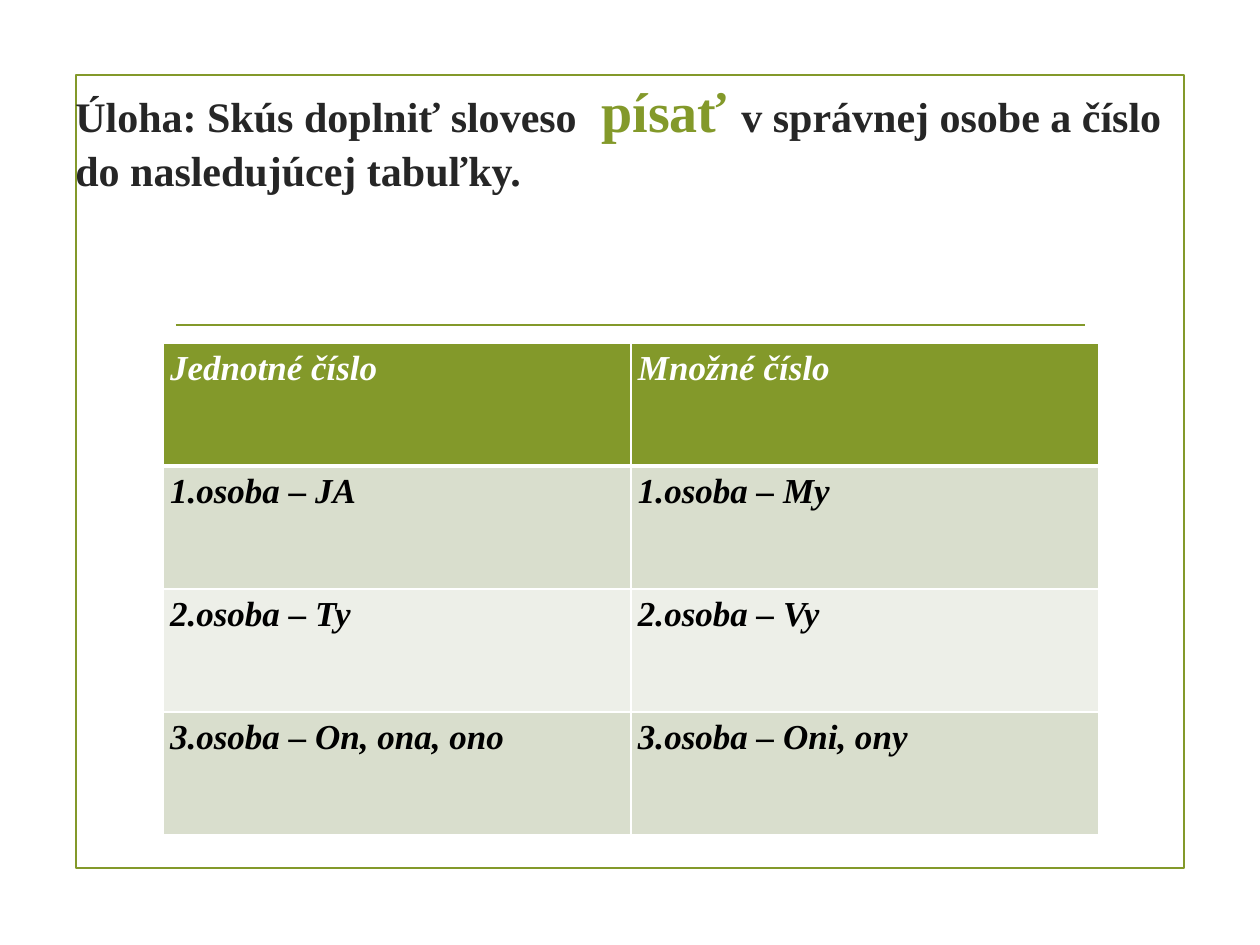
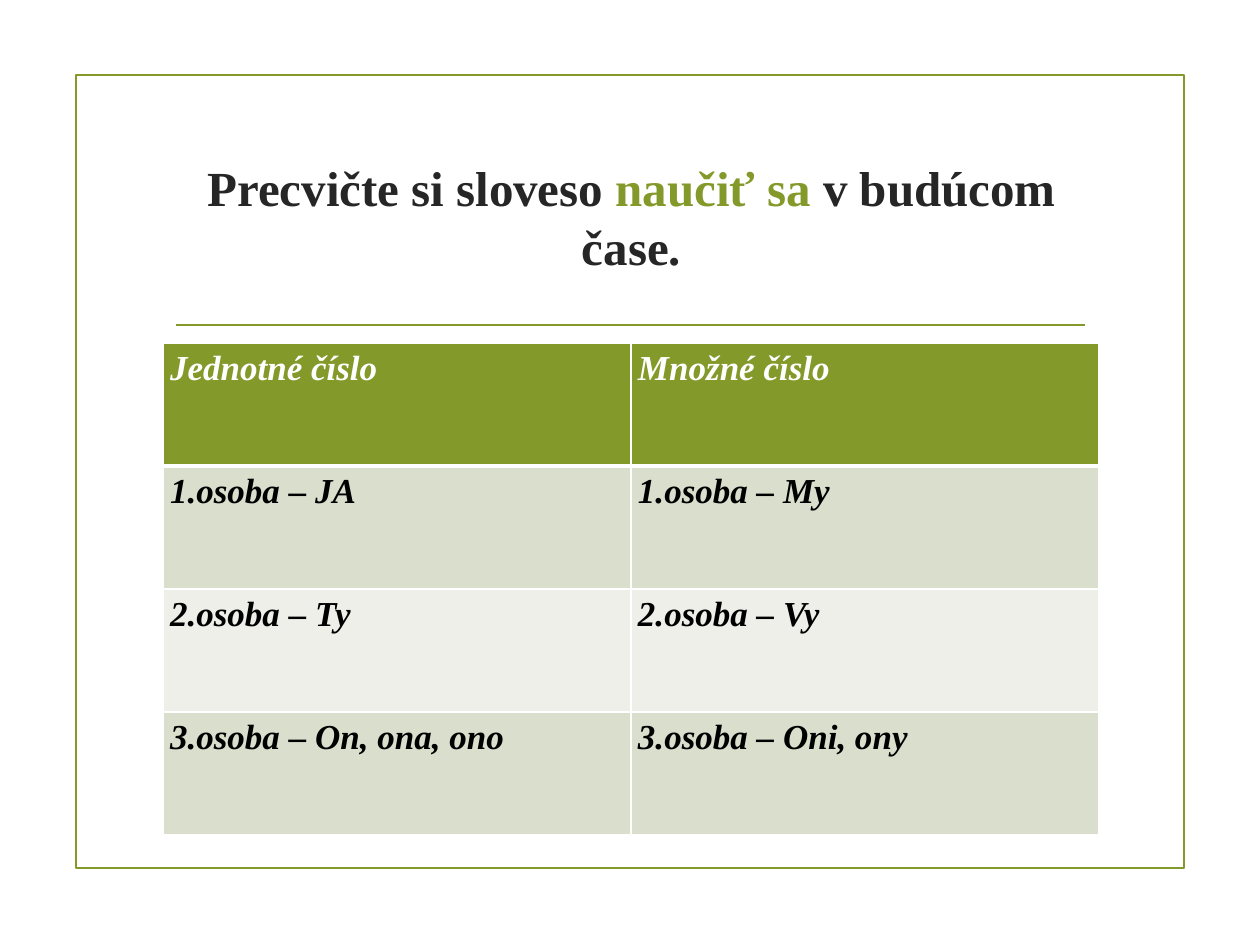
from dataclasses import dataclass
from typing import NamedTuple

from lxml.etree import SubElement
from pptx import Presentation
from pptx.dml.color import RGBColor
from pptx.enum.shapes import MSO_CONNECTOR, MSO_SHAPE
from pptx.enum.text import MSO_ANCHOR, PP_ALIGN
from pptx.oxml.ns import qn
from pptx.slide import Slide
from pptx.table import _Cell as Cell
from pptx.util import Emu, Pt


def px(count: int) -> Emu:
    return Emu(round(count * 914400 / 126))


@dataclass(frozen=True)
class Theme:
    font: str = "Times New Roman"
    green: str = "83992A"
    ink: str = "262626"
    black: str = "000000"
    white: str = "FFFFFF"
    bands: tuple[str, str] = ("D9DECD", "EDEFE8")
    small: int = 24
    medium: int = 28
    large: int = 32
    body: int = 20
    rule: float = 1.25
    thin: int = 1
    thick: int = 3


THEME = Theme()


class Box(NamedTuple):
    left: int
    top: int
    width: int
    height: int

    def emu(self) -> list[Emu]:
        return [px(side) for side in self]


class Phrase(NamedTuple):
    text: str
    size: int
    color: str = THEME.ink
    track: int = 0  # extra letter spacing, in points


@dataclass(frozen=True)
class Title:
    box: Box
    phrases: list[Phrase]
    align: PP_ALIGN
    bottom: int = 6


FRAME = Box(76, 75, 1108, 793)
RULE = Box(176, 325, 909, 0)
GRID = Box(163, 343, 936, 492)
PAD = 7
ROWS = [
    ("Jednotné číslo", "Množné číslo"),
    ("1.osoba – JA", "1.osoba – My"),
    ("2.osoba – Ty", "2.osoba – Vy"),
    ("3.osoba – On, ona, ono", "3.osoba – Oni, ony"),
]
TITLES = [
    Title(
        Box(63, 59, 1134, 195),
        [
            Phrase("Úloha: Skús doplniť sloveso", THEME.small),
            Phrase(" ", THEME.large, track=6),
            Phrase("písať ", THEME.large, THEME.green),
            Phrase("v správnej osobe a číslo do nasledujúcej tabuľky.", THEME.small),
        ],
        PP_ALIGN.LEFT,
        bottom=48,
    ),
    Title(
        Box(163, 126, 937, 180),
        [
            Phrase("Precvičte si sloveso ", THEME.medium),
            Phrase("naučiť sa ", THEME.medium, THEME.green),
            Phrase("v budúcom čase.", THEME.medium),
        ],
        PP_ALIGN.CENTER,
    ),
]


def rgb(code: str) -> RGBColor:
    return RGBColor.from_string(code)


def add_base(slide: Slide) -> None:
    """Draw the frame and the rule that every slide shares."""
    frame = slide.shapes.add_shape(MSO_SHAPE.RECTANGLE, *FRAME.emu())
    frame.shadow.inherit = False
    frame.fill.background()
    left, top, width, _ = RULE
    rule = slide.shapes.add_connector(
        MSO_CONNECTOR.STRAIGHT, px(left), px(top), px(left + width), px(top)
    )
    for shape in (frame, rule):
        shape.line.color.rgb = rgb(THEME.green)
        shape.line.width = Pt(THEME.rule)
    SubElement(rule._element.spPr, qn("a:effectLst"))


def add_title(slide: Slide, title: Title) -> None:
    frame = slide.shapes.add_textbox(*title.box.emu()).text_frame
    frame.word_wrap = True
    frame.vertical_anchor = MSO_ANCHOR.MIDDLE
    frame.margin_bottom = px(title.bottom)
    para = frame.paragraphs[0]
    para.alignment = title.align
    para.font.name = THEME.font
    para.font.bold = True
    for phrase in title.phrases:
        run = para.add_run()
        run.text = phrase.text
        run.font.size = Pt(phrase.size)
        run.font.color.rgb = rgb(phrase.color)
        if phrase.track:
            run._r.get_or_add_rPr().set("spc", str(phrase.track * 100))


def set_edges(cell: Cell, above: int, below: int) -> None:
    """Give the cell white borders; call before setting its fill."""
    props = cell._tc.get_or_add_tcPr()
    widths = {"L": THEME.thin, "R": THEME.thin, "T": above, "B": below}
    for side, width in widths.items():
        line = SubElement(props, qn(f"a:ln{side}"), w=str(Pt(width)))
        fill = SubElement(line, qn("a:solidFill"))
        SubElement(fill, qn("a:srgbClr"), val=THEME.white)


def set_cell(cell: Cell, text: str, row: int) -> None:
    head = row == 0
    set_edges(
        cell,
        THEME.thick if row == 1 else THEME.thin,
        THEME.thick if head else THEME.thin,
    )
    cell.fill.solid()
    cell.fill.fore_color.rgb = rgb(THEME.green if head else THEME.bands[(row - 1) % 2])
    cell.margin_left = cell.margin_right = px(PAD)
    cell.margin_top = cell.margin_bottom = 0
    para = cell.text_frame.paragraphs[0]
    para.text = text
    para.alignment = PP_ALIGN.JUSTIFY
    para.line_spacing = 1.15
    font = para.font
    font.name, font.size = THEME.font, Pt(THEME.body)
    font.bold = font.italic = True
    font.color.rgb = rgb(THEME.white if head else THEME.black)


def add_grid(slide: Slide) -> None:
    table = slide.shapes.add_table(len(ROWS), len(ROWS[0]), *GRID.emu()).table
    for row, texts in enumerate(ROWS):
        for col, text in enumerate(texts):
            set_cell(table.cell(row, col), text, row)


def main() -> None:
    deck = Presentation()
    deck.slide_width, deck.slide_height = px(1260), px(945)
    for title in TITLES:
        slide = deck.slides.add_slide(deck.slide_layouts[6])
        add_base(slide)
        add_title(slide, title)
        add_grid(slide)
    deck.save("out.pptx")


if __name__ == "__main__":
    main()
